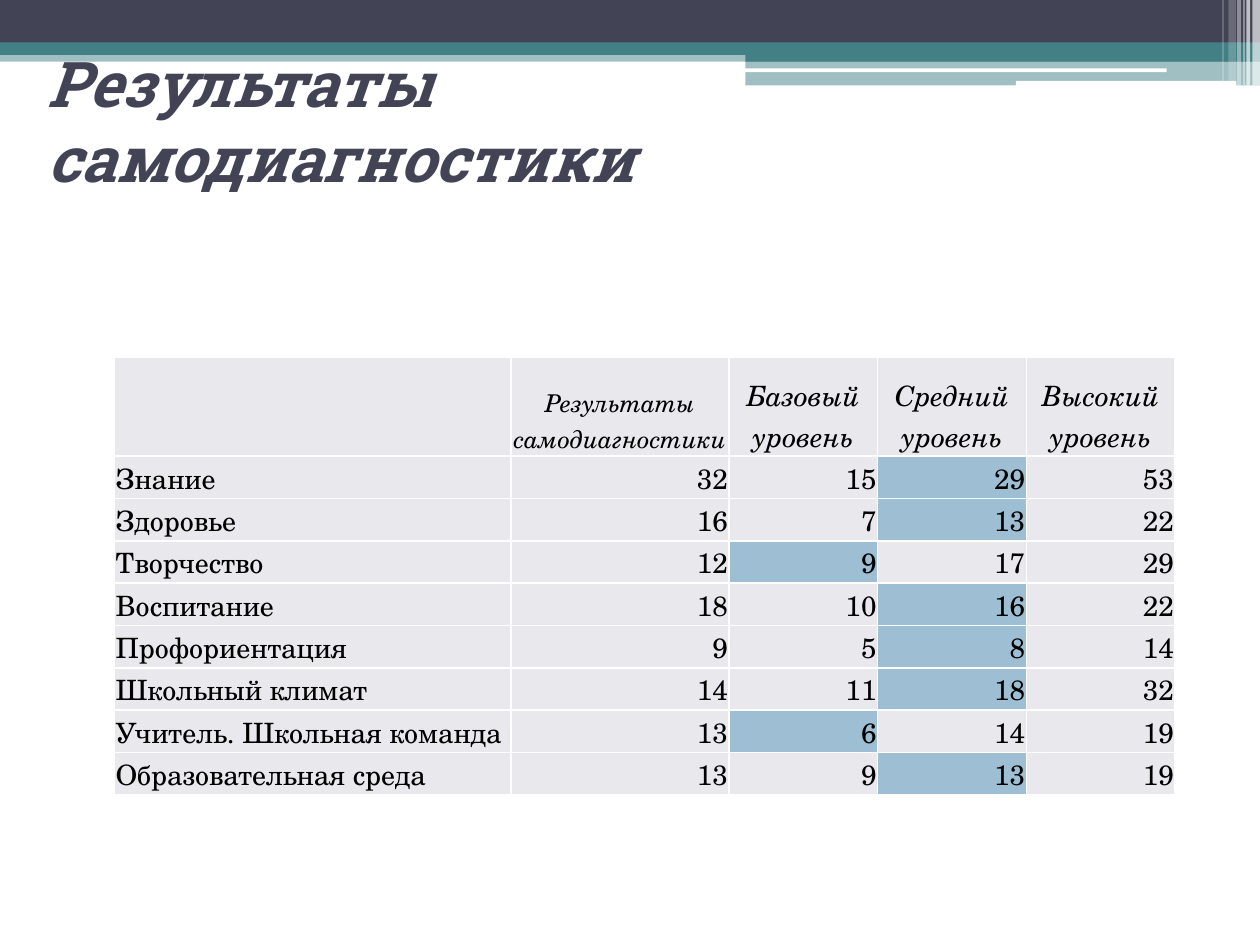
"""Build the self-assessment results slide."""
from lxml import etree
from pptx import Presentation
from pptx import util as u
from pptx.dml.color import RGBColor
from pptx.enum import shapes, text
from pptx.oxml.ns import qn

Pt = u.Pt
NAVY, TEAL, WHITE, GREY, BLUE = "424456", "438086", "FFFFFF", "E9E9ED", "9DBED3"


def paint(fill, color, alpha=100):
    """Give a fill a solid colour with an opacity in percent."""
    fill.solid()
    fill.fore_color.rgb = RGBColor.from_string(color)
    if alpha < 100:
        clr = fill._xPr.find(qn("a:solidFill"))[0]
        etree.SubElement(clr, qn("a:alpha"), val=str(alpha * 1000))


def write(tf, words, align, color, fmt):
    """Write one formatted paragraph into a text frame."""
    p = tf.paragraphs[0]
    p.alignment = align
    r = p.add_run()
    r.text = words
    r.font.color.rgb = RGBColor.from_string(color)
    for key, value in fmt.items():
        setattr(r.font, key, value)


prs = Presentation()
prs.slide_width, prs.slide_height = Pt(720), Pt(540)
s = prs.slides.add_slide(prs.slide_layouts[6])

bars = [
    (0, 28.8, 720, 6.5, TEAL, 50),
    (0, 0, 720, 24.5, NAVY, 100),
    (0, 24.2, 720, 7.2, TEAL, 100),
    (426, 28.1, 294, 7.2, TEAL, 100),
    (426, 34.6, 294, 14.2, TEAL, 50),
    (425.5, 39.1, 241.2, 2.2, WHITE, 100),
    (580.5, 46.3, 126, 2.9, WHITE, 100),
    (715.6, 0, 4.4, 48.8, WHITE, 65),
    (712.3, 0, 2.1, 48.8, WHITE, 65),
    (710.5, 0, 0.7, 48.8, WHITE, 60),
    (707, 0, 2.1, 48.8, WHITE, 40),
    (702, 0, 4.3, 46.3, WHITE, 20),
    (698.5, 0, 0.7, 46.3, WHITE, 30),
]
for x, y, w, h, color, alpha in bars:
    rounded = color == WHITE and alpha == 100
    kind = shapes.MSO_SHAPE.ROUNDED_RECTANGLE if rounded else shapes.MSO_SHAPE.RECTANGLE
    sp = s.shapes.add_shape(kind, Pt(x), Pt(y), Pt(w), Pt(h))
    sp.shadow.inherit = False
    sp.line.fill.background()
    paint(sp.fill, color, alpha)

tf = s.shapes.add_textbox(Pt(20.2), Pt(25.9), Pt(470.9), Pt(85)).text_frame
tf.word_wrap = True
tf.vertical_anchor = text.MSO_ANCHOR.MIDDLE
write(tf, "Результаты самодиагностики", text.PP_ALIGN.LEFT, NAVY,
      {"name": "Roboto Slab", "size": Pt(36), "bold": True, "italic": True})

rows = [
    ("", "Результаты самодиагностики", "Базовый уровень", "Средний уровень", "Высокий уровень"),
    ("Знание", 32, 15, 29, 53),
    ("Здоровье", 16, 7, 13, 22),
    ("Творчество", 12, 9, 17, 29),
    ("Воспитание", 18, 10, 16, 22),
    ("Профориентация", 9, 5, 8, 14),
    ("Школьный климат", 14, 11, 18, 32),
    ("Учитель. Школьная команда", 13, 6, 14, 19),
    ("Образовательная среда", 13, 9, 13, 19),
]
reached = [None, 3, 3, 2, 3, 3, 3, 2, 3]
widths = [226.6, 124.6, 85, 85, 85]
heights = [56.3] + [24.2] * 8

table = s.shapes.add_table(len(rows), len(widths), Pt(65.4), Pt(204.4),
                           Pt(sum(widths)), Pt(sum(heights))).table
for column, width in zip(table.columns, widths):
    column.width = Pt(width)
for row, height in zip(table.rows, heights):
    row.height = Pt(height)

margins = {"margin_left": Pt(0.7), "margin_right": Pt(0.7), "margin_top": Pt(0.7),
           "margin_bottom": 0, "vertical_anchor": text.MSO_ANCHOR.BOTTOM}
for i, values in enumerate(rows):
    for j, value in enumerate(values):
        cell = table.cell(i, j)
        for key, setting in margins.items():
            setattr(cell, key, setting)
        tcPr = cell._tc.get_or_add_tcPr()
        for side in ("a:lnL", "a:lnR", "a:lnT", "a:lnB"):
            ln = etree.SubElement(tcPr, qn(side), w=str(Pt(1)))
            fill = etree.SubElement(ln, qn("a:solidFill"))
            etree.SubElement(fill, qn("a:srgbClr"), val=WHITE)
        paint(cell.fill, BLUE if j == reached[i] else GREY)
        if value == "":
            continue
        if i == 0:
            align = text.PP_ALIGN.CENTER
        else:
            align = text.PP_ALIGN.RIGHT if j else text.PP_ALIGN.LEFT
        size = 14 if (i, j) == (0, 1) else 16
        write(cell.text_frame, str(value), align, "000000",
              {"name": "TeX Gyre Schola", "size": Pt(size), "bold": False, "italic": i == 0})

prs.save("out.pptx")
